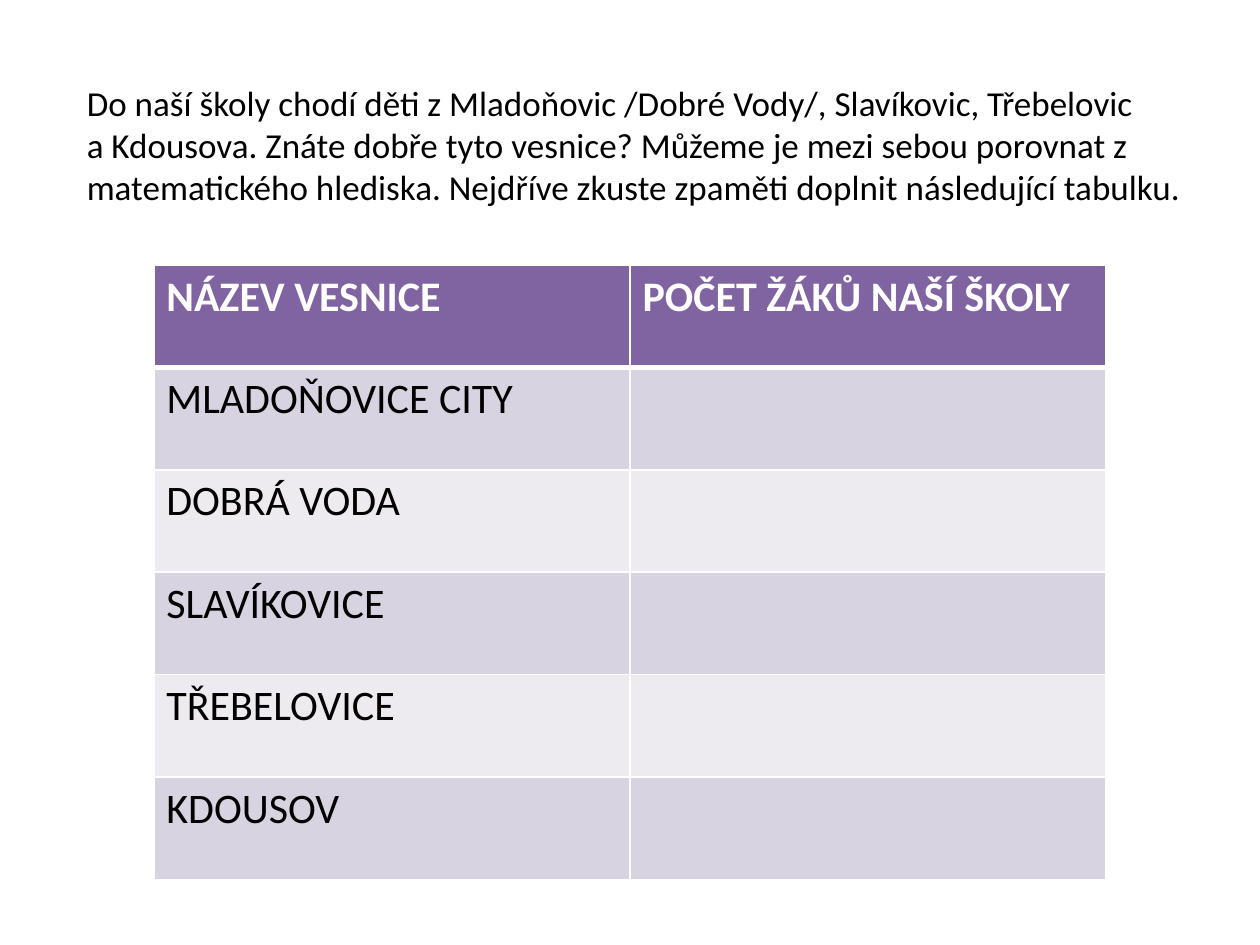
from lxml import etree
from pptx import Presentation
from pptx.dml.color import RGBColor
from pptx.enum.text import MSO_ANCHOR, MSO_AUTO_SIZE
from pptx.oxml.ns import qn
from pptx.util import Cm, Pt

TOP = MSO_ANCHOR.TOP
NO_AUTO_SIZE = MSO_AUTO_SIZE.NONE

BLACK = RGBColor(0x00, 0x00, 0x00)
WHITE = RGBColor(0xFF, 0xFF, 0xFF)
PURPLE = RGBColor(0x80, 0x64, 0xA2)
DARK_BAND = RGBColor(0xD8, 0xD3, 0xE0)
LIGHT_BAND = RGBColor(0xED, 0xEA, 0xF0)

FONT = "Calibri"
BLANK_LAYOUT = 6
THIN, THICK = Pt(1), Pt(3)

INTRODUCTION = (
    "Do naší školy chodí děti z Mladoňovic /Dobré Vody/, Slavíkovic, Třebelovic",
    "a Kdousova. Znáte dobře tyto vesnice? Můžeme je mezi sebou porovnat z",
    "matematického hlediska. Nejdříve zkuste zpaměti doplnit následující tabulku.",
)
HEADINGS = ("NÁZEV VESNICE", "POČET ŽÁKŮ NAŠÍ ŠKOLY")
VILLAGES = ("MLADOŇOVICE CITY", "DOBRÁ VODA", "SLAVÍKOVICE", "TŘEBELOVICE", "KDOUSOV")


def add_run(paragraph, text, size, color, bold=False):
    run = paragraph.add_run()
    run.text = text
    run.font.name = FONT
    run.font.size = Pt(size)
    run.font.bold = bold
    run.font.color.rgb = color


def add_introduction(slide):
    box = slide.shapes.add_textbox(Cm(1.5), Cm(1.52), Cm(22.66), Cm(3.68))
    frame = box.text_frame
    frame.word_wrap = False
    frame.auto_size = NO_AUTO_SIZE
    frame.vertical_anchor = TOP
    for index, line in enumerate(INTRODUCTION):
        paragraph = frame.add_paragraph() if index else frame.paragraphs[0]
        add_run(paragraph, line, 20, BLACK)


def set_borders(cell, top, bottom):
    """Give the cell white borders; call before the fill, which must follow them in the XML."""
    properties = cell._tc.get_or_add_tcPr()
    widths = {"a:lnL": THIN, "a:lnR": THIN, "a:lnT": top, "a:lnB": bottom}
    for tag, width in widths.items():
        line = etree.SubElement(properties, qn(tag), w=str(width))
        fill = etree.SubElement(line, qn("a:solidFill"))
        etree.SubElement(fill, qn("a:srgbClr"), val=str(WHITE))


def format_cell(cell, row):
    set_borders(cell,
                top=THICK if row == 1 else THIN,
                bottom=THICK if row == 0 else THIN)
    cell.fill.solid()
    if row == 0:
        cell.fill.fore_color.rgb = PURPLE
    else:
        cell.fill.fore_color.rgb = DARK_BAND if row % 2 else LIGHT_BAND


def add_village_table(slide):
    rows = [HEADINGS] + [(village, "") for village in VILLAGES]
    frame = slide.shapes.add_table(len(rows), len(HEADINGS),
                                   Cm(3.1), Cm(5.34), Cm(19.2), Cm(12.39))
    for row, texts in enumerate(rows):
        for column, text in enumerate(texts):
            cell = frame.table.cell(row, column)
            format_cell(cell, row)
            if text:
                header = row == 0
                add_run(cell.text_frame.paragraphs[0], text, 24,
                        WHITE if header else BLACK, bold=header)


def main():
    presentation = Presentation()
    presentation.slide_width = Cm(25.4)
    presentation.slide_height = Cm(19.05)
    slide = presentation.slides.add_slide(presentation.slide_layouts[BLANK_LAYOUT])
    add_introduction(slide)
    add_village_table(slide)
    presentation.save("out.pptx")


if __name__ == "__main__":
    main()
